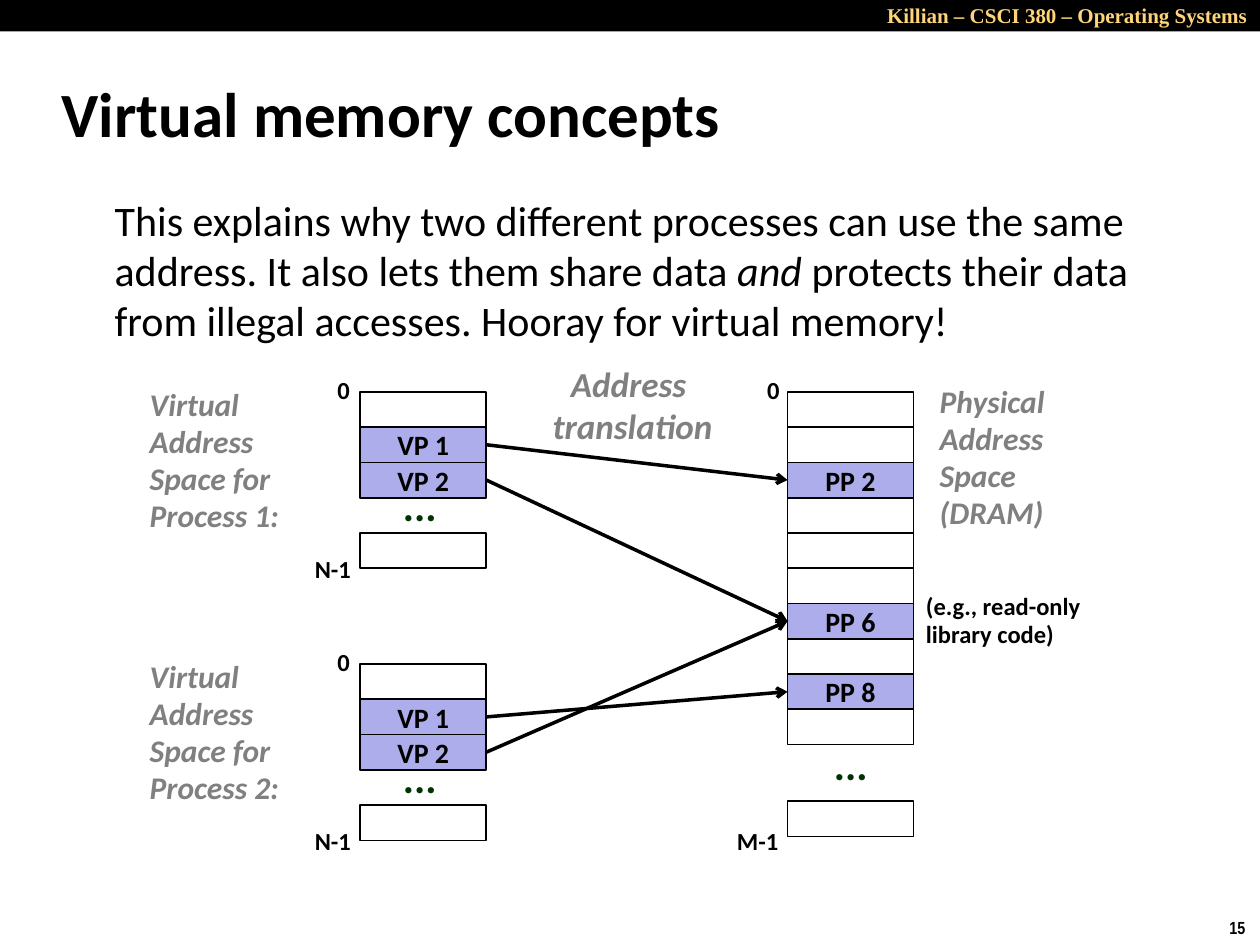
import pptx
import pptx.dml.color
import pptx.enum.shapes
import pptx.enum.text
import pptx.oxml
import pptx.oxml.ns
import pptx.util
from dataclasses import dataclass

Inches = pptx.util.Inches
Pt = pptx.util.Pt
Align = pptx.enum.text.PP_ALIGN
Anchor = pptx.enum.text.MSO_ANCHOR
Rect = pptx.enum.shapes.MSO_SHAPE.RECTANGLE
Straight = pptx.enum.shapes.MSO_CONNECTOR.STRAIGHT


@dataclass
class Theme:
    ink: str = "000000"
    gray: str = "808080"
    gold: str = "FFD579"
    page: str = "ADADEB"
    dots: str = "003300"
    font: str = "Calibri"
    title: int = 36
    body: int = 24
    head: int = 20
    note: int = 18
    cell: int = 16
    mark: int = 14
    course: int = 12
    number: int = 10


theme = Theme()
color = pptx.dml.color.RGBColor.from_string


def write(shape, text, size, ink=theme.ink, font=theme.font, bold=True, italic=False,
          align=Align.LEFT, anchor=Anchor.TOP, wrap=True, line=1.0, before=0):
    """Fill a shape with text: a new line starts a paragraph, *stars* mark italics."""
    frame = shape.text_frame
    frame.auto_size = pptx.enum.text.MSO_AUTO_SIZE.NONE
    frame.word_wrap = wrap
    frame.vertical_anchor = anchor
    for row, words in enumerate(text.split("\n")):
        para = frame.add_paragraph() if row else frame.paragraphs[0]
        para.alignment = align
        para.line_spacing = line
        para.space_before = Pt(before)
        for part, piece in enumerate(words.split("*")):
            run = para.add_run()
            run.text = piece
            run.font.name = font
            run.font.size = Pt(size)
            run.font.bold = bold
            run.font.italic = italic or part % 2 == 1
            run.font.color.rgb = color(ink)


def place(shape, left, top, width, height):
    shape.left, shape.top = Inches(left), Inches(top)
    shape.width, shape.height = Inches(width), Inches(height)
    return shape


deck = pptx.Presentation()
deck.slide_width, deck.slide_height = Inches(10), Inches(7.5)
slide = deck.slides.add_slide(deck.slide_layouts[1])
shapes = slide.shapes

# Header bar
bar = shapes.add_shape(Rect, 0, 0, Inches(10), Inches(0.25))
bar.shadow.inherit = False
bar.fill.solid()
bar.fill.fore_color.rgb = color(theme.ink)
bar.line.fill.background()

# Title and body
title = place(shapes.title, 0.39, 0.48, 8.3, 0.83)
write(title, "Virtual memory concepts", theme.title, anchor=Anchor.MIDDLE)
body = place(slide.placeholders[1], 0.43, 1.49, 8.64, 5.44)
write(body, "This explains why two different processes can use the same address. "
      "It also lets them share data *and* protects their data from illegal accesses. "
      "Hooray for virtual memory!", theme.body, bold=False)
props = body.text_frame.paragraphs[0]._p.get_or_add_pPr()
props.set("marL", str(Inches(0.38)))
props.set("indent", "0")
props.append(pptx.oxml.parse_xml(f'<a:buNone {pptx.oxml.ns.nsdecls("a")}/>'))

# Memory cells, as (left, top, label)
wide, high = 1, 0.28
virtual, real = 2.86, 6.25
first, second = 3.11, 5.27
cells = []
for top in (first, second):
    cells += [(virtual, top + row * high, label)
              for row, label in enumerate(["", "VP 1", "VP 2"])]
    cells.append((virtual, top + 4 * high, ""))
used = {2: "PP 2", 6: "PP 6", 8: "PP 8"}
cells += [(real, first + row * high, used.get(row, "")) for row in range(10)]
cells.append((real, 6.36, ""))

for left, top, label in cells:
    cell = place(shapes.add_shape(Rect, 0, 0, 0, 0), left, top, wide, high)
    cell.shadow.inherit = False
    cell.line.color.rgb = color(theme.ink)
    cell.line.width = Pt(1)
    if label:
        cell.fill.solid()
        cell.fill.fore_color.rgb = color(theme.page)
        write(cell, label, theme.cell, align=Align.CENTER, anchor=Anchor.MIDDLE, wrap=False)
    else:
        cell.fill.background()

# Text boxes, as (text, place, format)
mark = dict(size=theme.mark, line=0.98, wrap=False)
note = dict(size=theme.note, ink=theme.gray, italic=True, line=0.98)
dots = dict(size=theme.body, ink=theme.dots, line=0.88, before=9, wrap=False)
texts = [
    ("Killian – CSCI 380 – Operating Systems", (6.58, -0.03, 3.42, 0.3),
     dict(size=theme.course, ink=theme.gold, font="Times New Roman", align=Align.RIGHT)),
    ("15", (9.66, 7.23, 0.34, 0.27),
     dict(size=theme.number, font="Arial Narrow", wrap=False)),
    ("Address \ntranslation", (4.28, 2.83, 1.48, 0.77),
     dict(size=theme.head, ink=theme.gray, italic=True, align=Align.CENTER, wrap=False)),
    ("0", (5.99, 2.94, 0.31, 0.33), mark),
    ("M-1", (5.75, 6.52, 0.53, 0.33), mark),
    ("...", (6.52, 5.86, 0.47, 0.45), dots),
    ("Physical\nAddress\nSpace (DRAM)", (7.36, 3, 1.17, 1.29), note),
    ("(e.g., read-only\nlibrary code)", (7.25, 4.65, 1.59, 0.56), mark),
]
for count, top in enumerate((first, second), 1):
    texts += [
        (f"Virtual Address Space for Process {count}:", (1.09, top - 0.09, 1.5, 1.28), note),
        ("0", (2.58, top - 0.17, 0.31, 0.33), mark),
        ("N-1", (2.4, top + 1.25, 0.49, 0.33), mark),
        ("...", (3.1, top + 0.7, 0.47, 0.45), dots),
    ]
for text, spot, style in texts:
    write(place(shapes.add_textbox(0, 0, 0, 0), *spot), text, **style)

# Arrows from virtual to physical pages, as (block top, virtual row, physical row)
for top, start, end in [(first, 1, 2), (first, 2, 6), (second, 2, 6), (second, 1, 8)]:
    arrow = shapes.add_connector(
        Straight, Inches(virtual + wide), Inches(top + (start + 0.5) * high),
        Inches(real), Inches(first + (end + 0.5) * high))
    arrow.line.color.rgb = color(theme.ink)
    arrow.line.width = Pt(2)
    space = pptx.oxml.ns.nsdecls("a")
    arrow.line._get_or_add_ln().append(
        pptx.oxml.parse_xml(f'<a:tailEnd {space} type="arrow"/>'))
    arrow._element.spPr.append(pptx.oxml.parse_xml(f"<a:effectLst {space}/>"))

deck.save("out.pptx")
